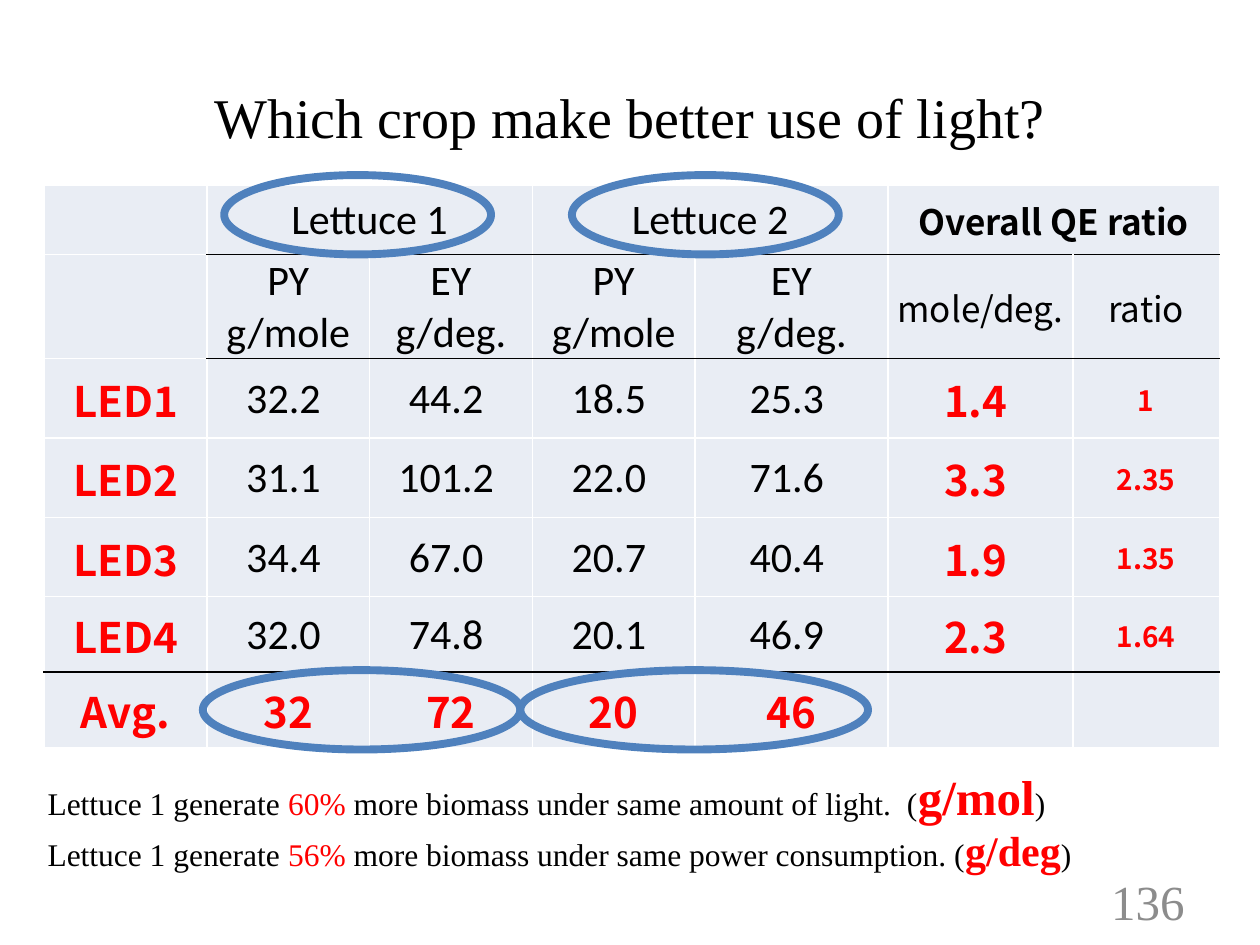
from pptx import Presentation
from pptx.dml.color import RGBColor
from pptx.enum.shapes import MSO_SHAPE
from pptx.enum.text import MSO_ANCHOR, PP_ALIGN
from pptx.oxml.ns import qn
from pptx.util import Cm, Pt
from lxml.etree import SubElement

COLORS = {
    "black": "000000",
    "red": "FF0000",
    "white": "FFFFFF",
    "cell": "E9EDF4",
    "ellipse": "4F81BD",
    "number": "8C8C8C",
}
SERIF = "Times New Roman"
PLAIN = "Calibri"
ACCENT = "Noto Sans CJK TC"

COLUMN_WIDTHS = [3.28, 3.28, 3.28, 3.28, 3.89, 3.73, 2.95]
ROW_HEIGHTS = [1.4, 2.1, 1.6, 1.6, 1.6, 1.52, 1.52]
ROWS = [
    ["", "Lettuce 1", "", "Lettuce 2", "", "Overall QE ratio", ""],
    ["", "PY g/mole", "EY\vg/deg.", "PY\vg/mole", "EY\vg/deg.", "mole/deg.", "ratio"],
    ["LED1", "32.2 ", "44.2 ", "18.5 ", "25.3 ", "1.4 ", "1"],
    ["LED2", "31.1 ", "101.2 ", "22.0 ", "71.6 ", "3.3 ", "2.35"],
    ["LED3", "34.4 ", "67.0 ", "20.7 ", "40.4 ", "1.9 ", "1.35"],
    ["LED4", "32.0 ", "74.8 ", "20.1 ", "46.9 ", "2.3 ", "1.64"],
    ["Avg.", "32", "72", "20", "46", "", ""],
]
HEADER_ROWS = 2
LAST_ROW = len(ROWS) - 1
RATIO_COLUMN = 5

FINDINGS = [
    ("60%", " more biomass under same amount of light.  (", "g/mol", 28),
    ("56%", " more biomass under same power consumption. (", "g/deg", 24),
]
ELLIPSES = [
    (4.09, 13.51, 6.4),
    (10.49, 13.51, 7.01),
    (4.52, 3.53, 5.38),
    (11.53, 3.53, 5.38),
]


def color(name):
    return RGBColor.from_string(COLORS[name])


def format_font(font, size, name, color_name, bold=False):
    font.size = Pt(size)
    font.name = name
    font.bold = bold
    font.color.rgb = color(color_name)


def add_title(slide, text):
    title = slide.shapes.title
    title.left, title.top, title.width, title.height = Cm(1.27), Cm(0.76), Cm(22.86), Cm(3.18)
    title.text_frame.text = text
    title.text_frame.vertical_anchor = MSO_ANCHOR.MIDDLE
    paragraph = title.text_frame.paragraphs[0]
    paragraph.alignment = PP_ALIGN.CENTER
    format_font(paragraph.font, 32, SERIF, "black")


def cell_style(row, column):
    if row < HEADER_ROWS:
        if column < RATIO_COLUMN:
            return 24, PLAIN, "black", False
        return 20, ACCENT, "black", row == 0
    if row < LAST_ROW and 0 < column < RATIO_COLUMN:
        return 24, PLAIN, "black", False
    return (16 if column > RATIO_COLUMN else 24), ACCENT, "red", True


def rule_color(row_above, column):
    under_header = 0 <= row_above < HEADER_ROWS and column > 0
    return "black" if under_header or row_above == LAST_ROW - 1 else "white"


def set_borders(cell, top, bottom):
    properties = cell._tc.get_or_add_tcPr()
    sides = {"a:lnL": "white", "a:lnR": "white", "a:lnT": top, "a:lnB": bottom}
    for position, (tag, color_name) in enumerate(sides.items()):
        line = SubElement(properties, qn(tag), w=str(Pt(1)))
        fill = SubElement(line, qn("a:solidFill"))
        SubElement(fill, qn("a:srgbClr"), val=COLORS[color_name])
        properties.insert(position, line)


def format_cell(cell, row, column):
    cell.fill.solid()
    cell.fill.fore_color.rgb = color("cell")
    set_borders(cell, rule_color(row - 1, column), rule_color(row, column))
    cell.vertical_anchor = MSO_ANCHOR.MIDDLE
    cell.margin_left = cell.margin_right = cell.margin_top = Cm(0.03)
    cell.margin_bottom = 0
    text = ROWS[row][column]
    if text:
        cell.text_frame.text = text
        paragraph = cell.text_frame.paragraphs[0]
        paragraph.alignment = PP_ALIGN.CENTER
        format_font(paragraph.font, *cell_style(row, column))


def add_yield_table(slide):
    frame = slide.shapes.add_table(
        len(ROWS), len(COLUMN_WIDTHS), Cm(0.89), Cm(3.73),
        Cm(sum(COLUMN_WIDTHS)), Cm(sum(ROW_HEIGHTS)))
    table = frame.table
    table.first_row = table.horz_banding = False
    for column, width in zip(table.columns, COLUMN_WIDTHS):
        column.width = Cm(width)
    for row, height in zip(table.rows, ROW_HEIGHTS):
        row.height = Cm(height)
    for column in (1, 3, 5):
        table.cell(0, column).merge(table.cell(0, column + 1))
    for row in range(len(ROWS)):
        for column in range(len(COLUMN_WIDTHS)):
            format_cell(table.cell(row, column), row, column)


def add_findings(slide):
    box = slide.shapes.add_shape(
        MSO_SHAPE.RECTANGLE, Cm(0.71), Cm(15.32), Cm(24.41), Cm(2.49))
    box.shadow.inherit = False
    box.fill.solid()
    box.fill.fore_color.rgb = color("white")
    box.line.fill.background()
    frame = box.text_frame
    frame.word_wrap = True
    frame.vertical_anchor = MSO_ANCHOR.TOP
    for index, (share, reason, unit, unit_size) in enumerate(FINDINGS):
        paragraph = frame.add_paragraph() if index else frame.paragraphs[0]
        paragraph.alignment = PP_ALIGN.LEFT
        pieces = [
            ("Lettuce 1 generate ", 18, "black", False),
            (share, 18, "red", False),
            (reason, 18, "black", False),
            (unit, unit_size, "red", True),
            (")", 18, "black", False),
        ]
        for text, size, color_name, bold in pieces:
            run = paragraph.add_run()
            run.text = text
            format_font(run.font, size, SERIF, color_name, bold)


def add_page_number(slide, text):
    box = slide.shapes.add_textbox(Cm(18.21), Cm(17.65), Cm(5.92), Cm(1.02))
    frame = box.text_frame
    frame.word_wrap = True
    frame.vertical_anchor = MSO_ANCHOR.MIDDLE
    frame.text = text
    paragraph = frame.paragraphs[0]
    paragraph.alignment = PP_ALIGN.RIGHT
    format_font(paragraph.font, 28, SERIF, "number")


def add_ellipse(slide, left, top, width):
    ellipse = slide.shapes.add_shape(
        MSO_SHAPE.OVAL, Cm(left), Cm(top), Cm(width), Cm(1.6))
    ellipse.shadow.inherit = False
    ellipse.fill.background()
    ellipse.line.color.rgb = color("ellipse")
    ellipse.line.width = Pt(4.5)


def main():
    presentation = Presentation()
    presentation.slide_width = Cm(25.4)
    presentation.slide_height = Cm(19.05)
    slide = presentation.slides.add_slide(presentation.slide_layouts[5])
    add_title(slide, "Which crop make better use of light?")
    add_yield_table(slide)
    add_findings(slide)
    add_page_number(slide, "136")
    for left, top, width in ELLIPSES:
        add_ellipse(slide, left, top, width)
    presentation.save("out.pptx")


if __name__ == "__main__":
    main()
